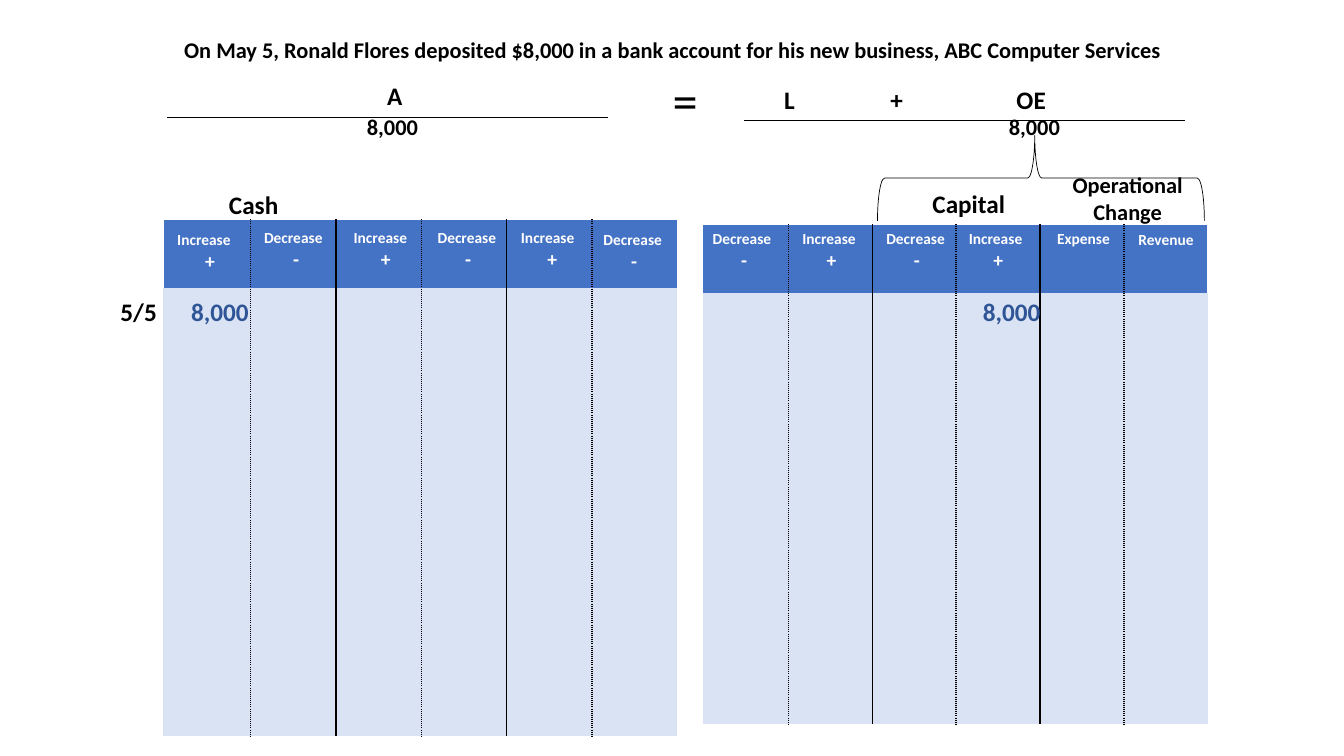
from dataclasses import dataclass

from lxml.etree import SubElement
from pptx import Presentation
from pptx.dml.color import RGBColor
from pptx.enum.shapes import MSO_CONNECTOR, MSO_SHAPE
from pptx.enum.text import MSO_AUTO_SIZE, PP_ALIGN
from pptx.oxml.ns import qn
from pptx.util import Pt


@dataclass(frozen=True)
class Theme:
    """Colours, font and type sizes of the slide."""
    font: str = "Calibri"
    ink: str = "000000"
    white: str = "FFFFFF"
    header: str = "4472C4"
    body: str = "DAE3F3"
    amount: str = "2F5597"
    label: int = 11
    sign: int = 14
    note: int = 16
    heading: int = 18
    equals: int = 36
    rule: float = 0.5
    border: float = 1


@dataclass(frozen=True)
class Box:
    """A rectangle in points."""
    left: float
    top: float
    width: float
    height: float

    def place(self, dx, dy, width, height):
        """Return a box offset from this box's top left corner."""
        return Box(self.left + dx, self.top + dy, width, height)

    def lengths(self):
        """Return the four lengths for python-pptx."""
        return [Pt(n) for n in (self.left, self.top, self.width, self.height)]


THEME = Theme()


def write(slide, box, *lines, color=THEME.ink, bold=True):
    """Write lines of (text, size, alignment) in a text box and return its frame."""
    frame = slide.shapes.add_textbox(*box.lengths()).text_frame
    frame.word_wrap = True
    frame.auto_size = MSO_AUTO_SIZE.SHAPE_TO_FIT_TEXT
    for index, (text, size, alignment) in enumerate(lines):
        paragraph = frame.add_paragraph() if index else frame.paragraphs[0]
        paragraph.text = text
        paragraph.alignment = alignment
        paragraph.font.name = THEME.font
        paragraph.font.size = Pt(size)
        paragraph.font.bold = bold
        paragraph.font.color.rgb = RGBColor.from_string(color)
    return frame


def draw_rule(slide, left, top, width):
    """Draw a thin horizontal rule."""
    rule = slide.shapes.add_connector(
        MSO_CONNECTOR.STRAIGHT, Pt(left), Pt(top), Pt(left + width), Pt(top))
    rule.line.width = Pt(THEME.rule)
    rule.line.color.rgb = RGBColor.from_string(THEME.ink)
    SubElement(rule._element.spPr, qn("a:effectLst"))


def set_border(cell, side, color=None, dash="solid"):
    """Set one border of a cell, or clear it when no colour is given."""
    border = SubElement(cell._tc.get_or_add_tcPr(), qn(f"a:ln{side}"),
                        w=str(Pt(THEME.border)))
    if color is None:
        SubElement(border, qn("a:noFill"))
        return
    SubElement(SubElement(border, qn("a:solidFill")), qn("a:srgbClr"), val=color)
    SubElement(border, qn("a:prstDash"), val=dash)


def add_ledger(slide, box, first_width, header_height, columns=6, rows=5):
    """Add a ledger whose column rules alternate between dotted and solid."""
    ledger = slide.shapes.add_table(rows, columns, *box.lengths()).table
    ledger.first_row = ledger.horz_banding = False
    for index, column in enumerate(ledger.columns):
        column.width = Pt((box.width - first_width) / (columns - 1) if index else first_width)
    for index, row in enumerate(ledger.rows):
        row.height = Pt((box.height - header_height) / (rows - 1) if index else header_height)
        outer = None if index else THEME.white
        for position, cell in enumerate(row.cells):
            for side, edge in (("L", position), ("R", position + 1)):
                if edge in (0, columns):
                    set_border(cell, side, outer)
                else:
                    set_border(cell, side, THEME.ink, "sysDot" if edge % 2 else "solid")
            set_border(cell, "T", outer)
            set_border(cell, "B")
            cell.fill.solid()
            cell.fill.fore_color.rgb = RGBColor.from_string(THEME.body if index else THEME.header)


def add_labels(slide, box, labels):
    """Write the column labels, each with its sign if it has one."""
    for name, sign, dx, dy, width in labels:
        lines = [(name, THEME.label, PP_ALIGN.LEFT)]
        if sign:
            lines.append((sign, THEME.sign, PP_ALIGN.CENTER))
        write(slide, box.place(dx, dy, width, 55), *lines, color=THEME.white)


def add_headline(slide, box):
    """Write the transaction."""
    write(slide, box, ("On May 5, Ronald Flores deposited $8,000 in a bank account "
                       "for his new business, ABC Computer Services",
                       THEME.note, PP_ALIGN.LEFT))


def add_equation(slide, box):
    """Write the accounting equation with the amounts under its rules."""
    write(slide, box.place(5, 8, 315, 29), ("A", THEME.heading, PP_ALIGN.CENTER))
    write(slide, box.place(344, 0, 52, 51),
          ("=", THEME.equals, PP_ALIGN.CENTER), bold=False)
    claims = write(slide, box.place(425.5, 11.5, 315, 29),
                   ("\tL\t+\tOE", THEME.heading, PP_ALIGN.LEFT))
    stops = SubElement(claims.paragraphs[0]._p.get_or_add_pPr(), qn("a:tabLst"))
    for position in (8, 84, 174):
        SubElement(stops, qn("a:tab"), pos=str(Pt(position)), algn="l")
    for rule_left, rule_top, amount_left in ((0, 38, 135.5), (412, 40.5, 594)):
        draw_rule(slide, box.left + rule_left, box.top + rule_top, 315)
        write(slide, box.place(amount_left, 31.5, 68, 27),
              ("8,000", THEME.note, PP_ALIGN.LEFT))


def add_assets(slide, box):
    """Build the cash account and its dated entry."""
    add_ledger(slide, box, first_width=62.5, header_height=49)
    add_labels(slide, box, (
        ("Increase", "+", 3, 4, 61), ("Decrease", "-", 65, 2.5, 60),
        ("Increase", "+", 129, 2.5, 60), ("Decrease", "-", 189, 2.5, 58),
        ("Increase", "+", 248.5, 2.5, 59), ("Decrease", "-", 307.5, 4, 58)))
    write(slide, box.place(40, -25, 53, 29), ("Cash", THEME.heading, PP_ALIGN.LEFT))
    write(slide, box.place(-37.5, 51, 69, 29), ("5/5", THEME.heading, PP_ALIGN.LEFT))
    write(slide, box.place(13, 51, 61, 29),
          ("8,000", THEME.heading, PP_ALIGN.LEFT), color=THEME.amount)


def add_claims(slide, box):
    """Build the liability and equity accounts with the brace over equity."""
    add_ledger(slide, box, first_width=61, header_height=49)
    add_labels(slide, box, (
        ("Decrease", "-", 0, -0.5, 59), ("Increase", "+", 64, -0.5, 56),
        ("Decrease", "-", 124, -0.5, 58), ("Increase", "+", 183, -0.5, 56),
        ("Expense", "", 246, -0.5, 64), ("Revenue", "", 304, 0.5, 59)))
    write(slide, box.place(157, -29.5, 100, 29), ("Capital", THEME.heading, PP_ALIGN.LEFT))
    write(slide, box.place(256.5, -42, 94, 46),
          ("Operational", THEME.note, PP_ALIGN.CENTER),
          ("Change", THEME.note, PP_ALIGN.CENTER))
    write(slide, box.place(193, 47.5, 57, 29),
          ("8,000", THEME.heading, PP_ALIGN.LEFT), color=THEME.amount)
    brace = slide.shapes.add_shape(
        MSO_SHAPE.LEFT_BRACE, *box.place(211, -150, 61, 233.5).lengths())
    brace.rotation = 90
    brace.adjustments[0] = 0.083
    brace.adjustments[1] = 0.519
    brace.shadow.inherit = False
    brace.fill.background()
    brace.line.width = Pt(THEME.rule)
    brace.line.color.rgb = RGBColor.from_string(THEME.ink)


def main():
    """Build the slide and save it."""
    presentation = Presentation()
    presentation.slide_width, presentation.slide_height = Pt(960), Pt(540)
    slide = presentation.slides.add_slide(presentation.slide_layouts[6])
    add_assets(slide, Box(116.5, 157, 367.5, 369))
    add_claims(slide, Box(502, 160.5, 361, 357))
    add_equation(slide, Box(119.5, 45.5, 735, 59))
    add_headline(slide, Box(124.5, 22, 773, 27))
    presentation.save("out.pptx")


if __name__ == "__main__":
    main()
